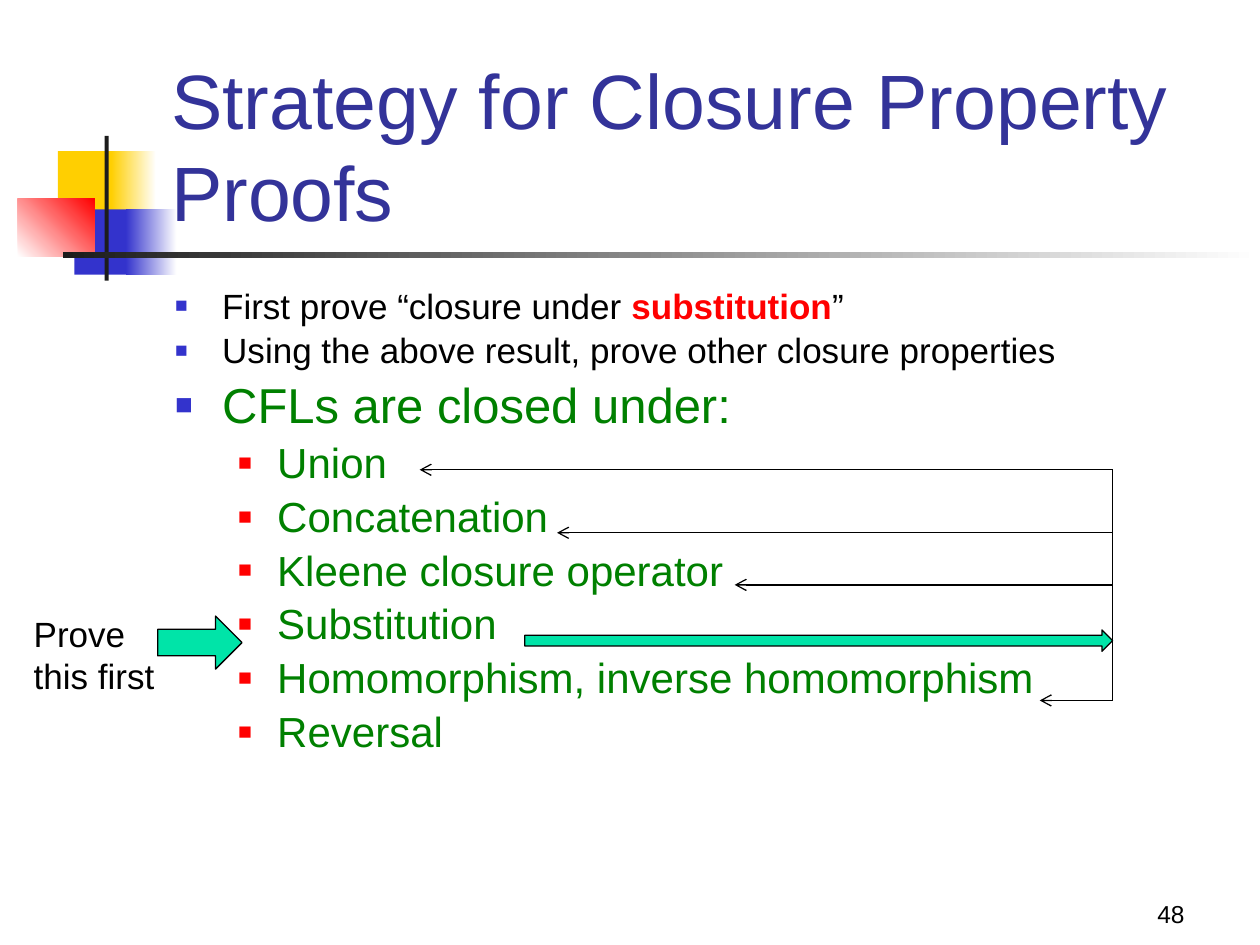
from lxml import etree
from pptx import Presentation
from pptx.dml.color import RGBColor
from pptx.enum.shapes import MSO_CONNECTOR as CONN, MSO_SHAPE as SHAPE
from pptx.enum.text import MSO_ANCHOR as ANCHOR, MSO_AUTO_SIZE as AUTO, PP_ALIGN as ALIGN
from pptx.oxml.ns import qn
from pptx.util import Cm, Pt

COLORS = {
    "yellow": "FFCF01", "blue": "3333CC", "red": "FF0000", "dark": "1C1C1C",
    "white": "FFFFFF", "black": "000000", "title": "333399",
    "green": "008000", "mint": "00E4A8",
}
RGB = {name: RGBColor.from_string(value) for name, value in COLORS.items()}


def add_text(box, paragraphs, **frame):
    """Add a text box; each paragraph is a list of (text, size, colour, bold)."""
    tf = s.shapes.add_textbox(*map(Cm, box)).text_frame
    for name, value in {"word_wrap": True, **frame}.items():
        setattr(tf, name, value)
    for i, runs in enumerate(paragraphs):
        p = tf.add_paragraph() if i else tf.paragraphs[0]
        for text, size, color, bold in runs:
            for j, line in enumerate(text.split("\n")):
                if j:
                    p.add_line_break()
                r = p.add_run()
                r.text = line
                font = {"name": "Arial", "size": Pt(size), "bold": bold}
                for name, value in font.items():
                    setattr(r.font, name, value)
                r.font.color.rgb = RGB[color]
    return tf


def add_shape(kind, box, colors, angle=0):
    """Add a shape without outline, filled with one colour or a two-colour gradient."""
    sp = s.shapes.add_shape(kind, *map(Cm, box))
    sp.shadow.inherit = False
    sp.line.fill.background()
    if len(colors) == 1:
        sp.fill.solid()
        sp.fill.fore_color.rgb = RGB[colors[0]]
    else:
        sp.fill.gradient()
        sp.fill.gradient_angle = angle
        for stop, color in zip(sp.fill.gradient_stops, colors):
            stop.color.rgb = RGB[color]
    return sp


prs = Presentation()
prs.slide_width, prs.slide_height = Cm(25.4), Cm(19.05)
s = prs.slides.add_slide(prs.slide_layouts[6])

# Corner ornament and title rule
for box, colors, angle in [
    ((1.17, 3.05, 1.22, 1.32), ["yellow"], 0),
    ((2.24, 3.05, 0.91, 1.32), ["yellow", "white"], 0),
    ((1.5, 4.22, 1.17, 1.32), ["blue"], 0),
    ((2.54, 4.22, 1.02, 1.32), ["blue", "white"], 0),
    ((0.36, 4.01, 1.55, 1.17), ["white", "red"], 45),
    ((2.11, 2.74, 0.08, 2.92), ["dark"], 0),
    ((1.27, 5.08, 24.13, 0.13), ["dark", "white"], 0),
]:
    add_shape(SHAPE.RECTANGLE, box, colors, angle)

number = add_text((18.85, 17.58, 5.28, 1.27), [[("48", 14, "black", False)]],
                  vertical_anchor=ANCHOR.BOTTOM)
number.paragraphs[0].alignment = ALIGN.RIGHT
add_text((3.2, 1.73, 21.64, 3.18),
         [[("Strategy for Closure Property Proofs", 44, "title", False)]],
         vertical_anchor=ANCHOR.BOTTOM)

# Bulleted list: three main points, then the closure properties
points = [
    [("First prove “closure under ", 20, "black", False),
     ("substitution", 20, "red", True), ("”", 20, "black", False)],
    [("Using the above result, prove other closure properties", 20, "black", False)],
    [("CFLs are closed under:", 28, "green", False)],
]
properties = ["Union", "Concatenation", "Kleene closure operator", "Substitution",
              "Homomorphism, inverse homomorphism", "Reversal"]
body = add_text((3.28, 5.61, 21.59, 11.43),
                points + [[(name, 24, "green", False)] for name in properties])
for i, p in enumerate(body.paragraphs):
    main = i < len(points)
    if i:
        p.line_spacing = 0.9
    p.level = 0 if main else 1
    pPr = p._p.get_or_add_pPr()
    pPr.set("marL", str(Cm(0.95 if main else 2.06)))
    pPr.set("indent", str(-Cm(0.95 if main else 0.79)))
    before = etree.SubElement(pPr, qn("a:spcBef"))
    etree.SubElement(before, qn("a:spcPct"), val="20000")
    color = etree.SubElement(pPr, qn("a:buClr"))
    etree.SubElement(color, qn("a:srgbClr"), val=COLORS["blue" if main else "red"])
    etree.SubElement(pPr, qn("a:buSzPct"), val="60000" if main else "55000")
    etree.SubElement(pPr, qn("a:buFont"), typeface="Arial")
    etree.SubElement(pPr, qn("a:buChar"), char="■")

add_text((0.43, 12.22, 2.97, 1.96), [[("Prove \nthis first", 20, "black", False)]],
         word_wrap=False, auto_size=AUTO.SHAPE_TO_FIT_TEXT)

# Substitution feeds a trunk line that points back at the other properties
trunk_x, top, bottom = 22.43, 9.47, 14.12
lines = [(trunk_x, bottom, trunk_x, top, False)]
lines += [(trunk_x, y, x, y, True)
          for x, y in [(8.46, top), (11.23, 10.74), (14.81, 11.79), (20.96, bottom)]]
for x1, y1, x2, y2, arrow in lines:
    line = s.shapes.add_connector(CONN.STRAIGHT, Cm(x1), Cm(y1), Cm(x2), Cm(y2))
    line.line.color.rgb = RGB["black"]
    line.line.width = Pt(0.75)
    spPr = line._element.spPr
    if arrow:
        etree.SubElement(spPr.find(qn("a:ln")), qn("a:tailEnd"), type="arrow")
    etree.SubElement(spPr, qn("a:effectLst"))

for box in [(3.18, 12.42, 1.7, 1.07), (10.58, 12.7, 11.85, 0.43)]:
    sp = add_shape(SHAPE.RIGHT_ARROW, box, ["mint"])
    sp.line.color.rgb = RGB["black"]
    sp.line.width = Pt(0.75)

prs.save("out.pptx")
